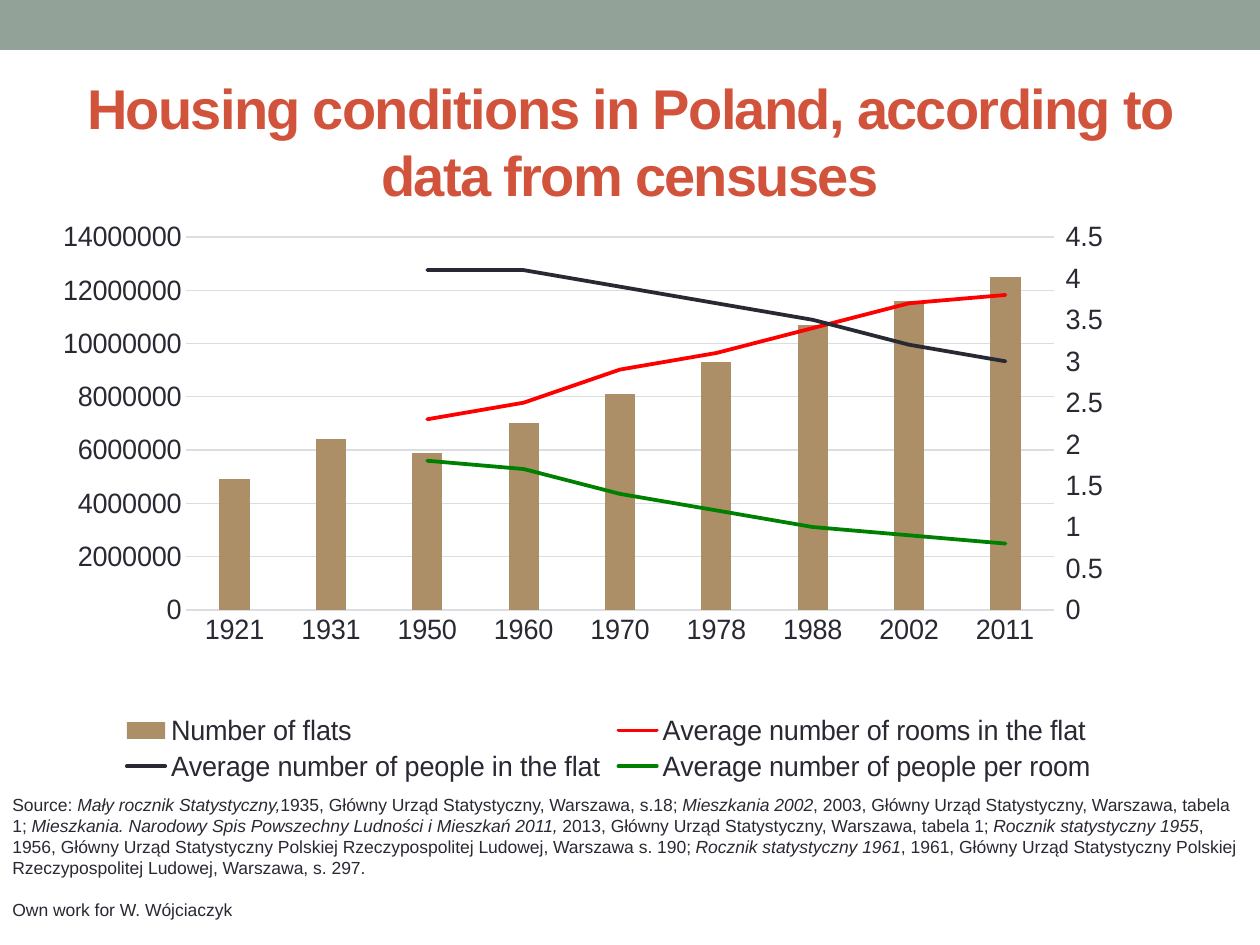
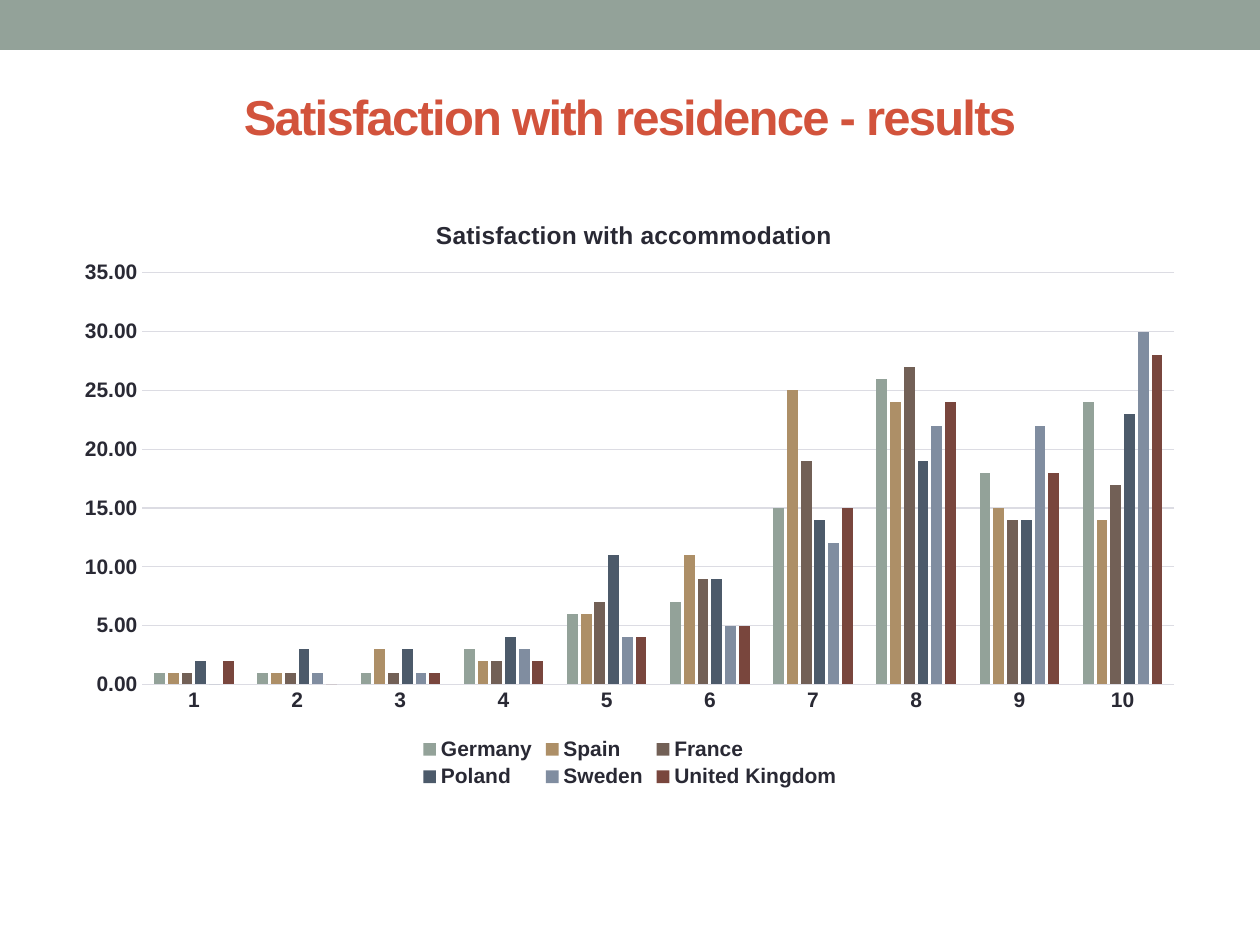
from pptx import Presentation
from pptx.chart.axis import ValueAxis
from pptx.chart.data import CategoryChartData
from pptx.dml.color import RGBColor
from pptx.enum.chart import XL_CHART_TYPE, XL_LEGEND_POSITION, XL_MARKER_STYLE, XL_TICK_MARK
from pptx.enum.shapes import MSO_SHAPE
from pptx.enum.text import MSO_ANCHOR, MSO_AUTO_SIZE, PP_ALIGN
from pptx.oxml import parse_xml
from pptx.oxml.ns import nsdecls, qn
from pptx.util import Pt

COLUMNS = XL_CHART_TYPE.COLUMN_CLUSTERED
BOTTOM = XL_LEGEND_POSITION.BOTTOM
NO_MARKER = XL_MARKER_STYLE.NONE
TICK_NONE, TICK_OUT = XL_TICK_MARK.NONE, XL_TICK_MARK.OUTSIDE
RECTANGLE = MSO_SHAPE.RECTANGLE
MIDDLE, TOP = MSO_ANCHOR.MIDDLE, MSO_ANCHOR.TOP
FIT_SHAPE, FIT_NONE = MSO_AUTO_SIZE.SHAPE_TO_FIT_TEXT, MSO_AUTO_SIZE.NONE
LEFT, CENTER = PP_ALIGN.LEFT, PP_ALIGN.CENTER

# Shared style
EMU_PER_PX = 914400 / 126
SLIDE_SIZE = (1260, 945)
BAND = (0, 0, 1260, 50)
FONT = "Arial"
COLORS = {
    "ink": "292934", "title": "D2533C", "grid": "DCDCE3",
    "sage": "93A299", "tan": "AD8F67", "brown": "726056",
    "slate": "4C5A6A", "steel": "808DA0", "rust": "79463D",
    "red": "FF0000", "green": "008000",
}

# Content: housing conditions
HOUSING = {
    "title": "Housing conditions in Poland, according to data from censuses",
    "title_box": (63, 73, 1134, 136),
    "title_size": 32,
    "chart_box": (63, 220, 1056, 567),
    "plot": (0.086, 0.03, 0.85, 0.658),
    "size": 16,
    "bold": False,
    "format": "General",
    "scale": (14000000, 2000000),
    "categories": ["1921", "1931", "1950", "1960", "1970", "1978", "1988", "2002", "2011"],
    "columns": [
        ("Number of flats", "tan",
         [4900000, 6400000, 5900000, 7000000, 8100000, 9300000, 10700000, 11600000, 12500000]),
    ],
    "lines": [
        ("Average number of rooms in the flat", "red",
         [None, None, 2.3, 2.5, 2.9, 3.1, 3.4, 3.7, 3.8]),
        ("Average number of people in the flat", "ink",
         [None, None, 4.1, 4.1, 3.9, 3.7, 3.5, 3.2, 3]),
        ("Average number of people per room", "green",
         [None, None, 1.8, 1.7, 1.4, 1.2, 1, 0.9, 0.8]),
    ],
    "right_scale": (4.5, 0.5),
}
SOURCE_BOX = (0, 788, 1260, 140)
# Each run is (text, italic)
SOURCES = [
    [("Source: ", False),
     ("Mały rocznik Statystyczny,", True),
     ("1935, Główny Urząd Statystyczny, Warszawa, s.18; ", False),
     ("Mieszkania 2002", True),
     (", 2003, Główny Urząd Statystyczny, Warszawa, tabela 1; ", False),
     ("Mieszkania. Narodowy Spis Powszechny Ludności i Mieszkań 2011,", True),
     (" 2013, Główny Urząd Statystyczny, Warszawa, tabela 1; ", False),
     ("Rocznik statystyczny 1955", True),
     (", 1956, Główny Urząd Statystyczny Polskiej Rzeczypospolitej Ludowej, Warszawa s. 190; ", False),
     ("Rocznik statystyczny 1961", True),
     (", 1961, Główny Urząd Statystyczny Polskiej Rzeczypospolitej Ludowej, Warszawa, s. 297.", False)],
    [("Own work for W. Wójciaczyk", False)],
]

# Content: satisfaction with residence
SATISFACTION = {
    "title": "Satisfaction with residence - results",
    "title_box": (63, 58, 1134, 115),
    "title_size": 28,
    "chart_box": (63, 191, 1134, 602),
    "chart_title": "Satisfaction with accommodation",
    "chart_title_at": (0.325, 0.04),
    "plot": (0.07, 0.136, 0.91, 0.684),
    "size": 12,
    "bold": True,
    "format": "0.00",
    "scale": (35, 5),
    "categories": [str(score) for score in range(1, 11)],
    "columns": [
        ("Germany", "sage", [1, 1, 1, 3, 6, 7, 15, 26, 18, 24]),
        ("Spain", "tan", [1, 1, 3, 2, 6, 11, 25, 24, 15, 14]),
        ("France", "brown", [1, 1, 1, 2, 7, 9, 19, 27, 14, 17]),
        ("Poland", "slate", [2, 3, 3, 4, 11, 9, 14, 19, 14, 23]),
        ("Sweden", "steel", [0, 1, 1, 3, 4, 5, 12, 22, 22, 30]),
        ("United Kingdom", "rust", [2, 0, 1, 2, 4, 5, 15, 24, 18, 28]),
    ],
    "lines": [],
}


def px(lengths):
    return [round(length * EMU_PER_PX) for length in lengths]


def color(name):
    return RGBColor.from_string(COLORS[name])


def style_font(font, size, bold=False, ink="ink"):
    font.name, font.size, font.bold = FONT, Pt(size), bold
    font.color.rgb = color(ink)


def style_line(line, name, width):
    line.color.rgb = color(name)
    line.width = Pt(width)


def add_text(slide, box, paragraphs, size, bold=False, ink="ink", align=LEFT,
             anchor=TOP, fit=FIT_NONE, tracking=0, gap=0):
    frame = slide.shapes.add_textbox(*px(box)).text_frame
    frame.word_wrap = True
    frame.auto_size = fit
    frame.vertical_anchor = anchor
    for number, runs in enumerate(paragraphs):
        paragraph = frame.add_paragraph() if number else frame.paragraphs[0]
        paragraph.alignment = align
        paragraph.space_before = Pt(gap if number else 0)
        for words, italic in runs:
            run = paragraph.add_run()
            run.text = words
            style_font(run.font, size, bold, ink)
            run.font.italic = italic
            if tracking:
                run.font._element.set("spc", str(tracking * 100))


def set_layout(parent, index, fractions, inner=False):
    """Give a chart part a manual place, as fractions of the chart."""
    for old in parent.findall(qn("c:layout")):
        parent.remove(old)
    target = '<c:layoutTarget val="inner"/>' if inner else ""
    modes = "".join(f'<c:{side}Mode val="edge"/>' for side in "xy")
    sizes = "".join(f'<c:{key} val="{part}"/>' for key, part in zip("xywh", fractions))
    parent.insert(index, parse_xml(
        f'<c:layout {nsdecls("c")}><c:manualLayout>{target}{modes}{sizes}'
        '</c:manualLayout></c:layout>'))


def style_axis(axis, content, tick=TICK_NONE):
    axis.major_tick_mark, axis.minor_tick_mark = tick, TICK_NONE
    style_font(axis.tick_labels.font, content["size"], content["bold"])


def style_value_axis(axis, content, scale, tick=TICK_NONE):
    style_axis(axis, content, tick)
    axis.minimum_scale = 0
    axis.maximum_scale, axis.major_unit = scale
    axis.format.line.fill.background()
    axis.tick_labels.number_format = content["format"]
    axis.tick_labels.number_format_is_linked = False


def move_to_right_axis(chart, first):
    """Turn the series from number first on into lines on a right-hand axis."""
    plot_area = chart.element.find(".//" + qn("c:plotArea"))
    bars = plot_area.find(qn("c:barChart"))
    lines = parse_xml(
        f'<c:lineChart {nsdecls("c")}><c:grouping val="standard"/><c:varyColors val="0"/>'
        '<c:marker val="1"/><c:axId val="5001"/><c:axId val="5002"/></c:lineChart>')
    for series in bars.findall(qn("c:ser"))[first:]:
        for flag in series.findall(qn("c:invertIfNegative")):
            series.remove(flag)
        lines.find(qn("c:marker")).addprevious(series)
    bars.addnext(lines)

    def axis_xml(tag, own, other, hidden, side, crosses):
        return parse_xml(
            f'<c:{tag} {nsdecls("c")}><c:axId val="{own}"/>'
            '<c:scaling><c:orientation val="minMax"/></c:scaling>'
            f'<c:delete val="{hidden}"/><c:axPos val="{side}"/>'
            '<c:majorTickMark val="none"/><c:minorTickMark val="none"/>'
            f'<c:tickLblPos val="nextTo"/><c:crossAx val="{other}"/>'
            f'<c:crosses val="{crosses}"/></c:{tag}>')

    right = axis_xml("valAx", 5002, 5001, 0, "r", "max")
    plot_area.find(qn("c:valAx")).addnext(right)
    right.addnext(axis_xml("catAx", 5001, 5002, 1, "b", "autoZero"))
    return ValueAxis(right)


def add_column_chart(slide, content):
    series_list = content["columns"] + content["lines"]
    chart_data = CategoryChartData()
    chart_data.categories = content["categories"]
    for name, _, values in series_list:
        chart_data.add_series(name, values)
    chart = slide.shapes.add_chart(COLUMNS, *px(content["chart_box"]), chart_data).chart
    style_font(chart.font, content["size"], content["bold"])

    # Axes and legend
    style_axis(chart.category_axis, content)
    style_line(chart.category_axis.format.line, "grid", 0.75)
    style_value_axis(chart.value_axis, content, content["scale"])
    style_line(chart.value_axis.major_gridlines.format.line, "grid", 0.75)
    chart.has_legend = True
    chart.legend.position = BOTTOM
    chart.legend.include_in_layout = False
    style_font(chart.legend.font, content["size"], content["bold"])

    # Heading and plot area
    chart.has_title = "chart_title" in content
    if chart.has_title:
        heading = chart.chart_title.text_frame
        heading.text = content["chart_title"]
        style_font(heading.paragraphs[0].runs[0].font, 14, True)
        set_layout(chart.element.find(".//" + qn("c:title")), 1, content["chart_title_at"])
    set_layout(chart.element.find(".//" + qn("c:plotArea")), 0, content["plot"], inner=True)

    # Columns, then lines
    columns = chart.plots[0]
    columns.gap_width, columns.overlap = 219, -27
    columns.vary_by_categories = False
    if content["lines"]:
        right_axis = move_to_right_axis(chart, len(content["columns"]))
        style_value_axis(right_axis, content, content["right_scale"], TICK_OUT)
        for series, (_, ink, _) in zip(chart.plots[1].series, content["lines"]):
            style_line(series.format.line, ink, 2.25)
            series.format.line._get_or_add_ln().set("cap", "rnd")
            series.marker.style = NO_MARKER
            series.smooth = False
    for series, (_, ink, _) in zip(columns.series, content["columns"]):
        series.format.fill.solid()
        series.format.fill.fore_color.rgb = color(ink)
        series.invert_if_negative = False


def add_slide(deck, content):
    slide = deck.slides.add_slide(deck.slide_layouts[6])
    band = slide.shapes.add_shape(RECTANGLE, *px(BAND))
    band.shadow.inherit = False
    band.fill.solid()
    band.fill.fore_color.rgb = color("sage")
    band.line.fill.background()
    add_text(slide, content["title_box"], [[(content["title"], False)]],
             content["title_size"], bold=True, ink="title", align=CENTER,
             anchor=MIDDLE, tracking=-1)
    add_column_chart(slide, content)
    return slide


def main():
    deck = Presentation()
    deck.slide_width, deck.slide_height = px(SLIDE_SIZE)
    housing = add_slide(deck, HOUSING)
    add_text(housing, SOURCE_BOX, SOURCES, 10, fit=FIT_SHAPE, gap=12)
    add_slide(deck, SATISFACTION)
    deck.save("out.pptx")


if __name__ == "__main__":
    main()
